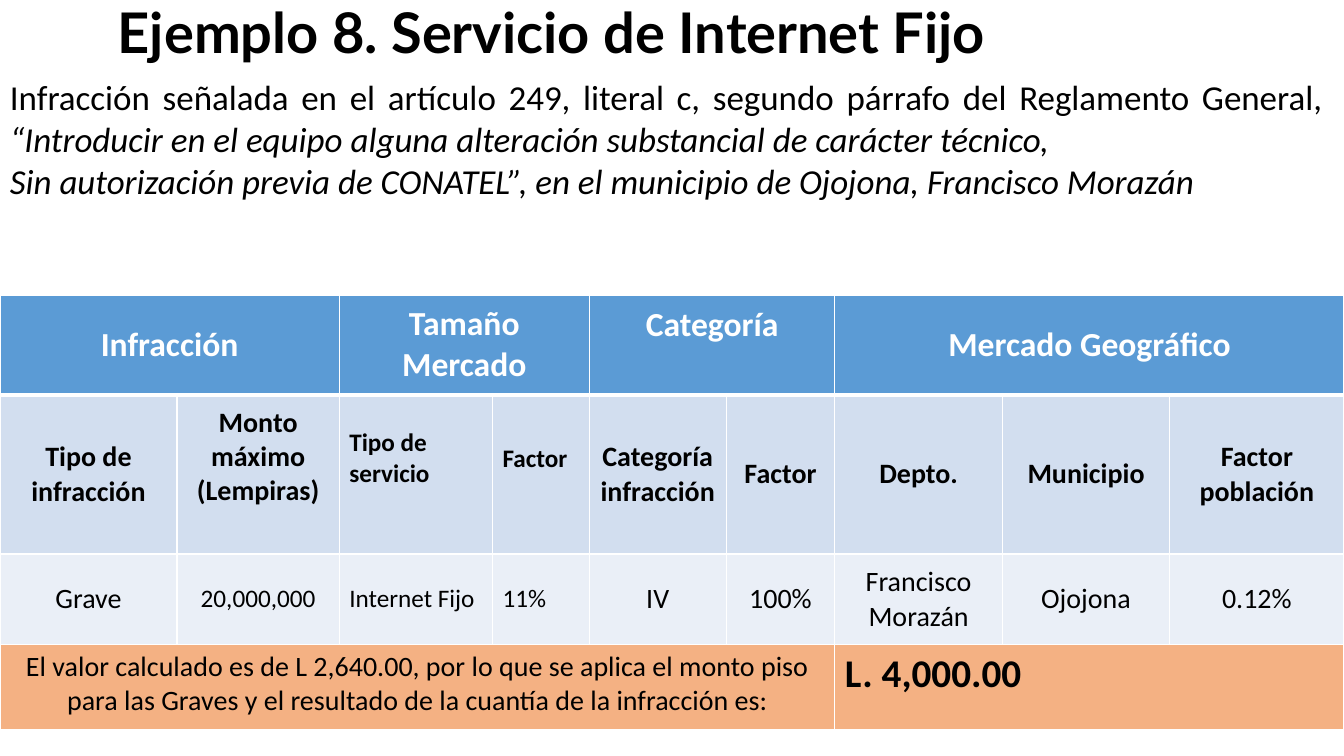
"""Slide on a fixed internet infraction and its calculated penalty."""
from lxml.etree import SubElement
from pptx import Presentation
from pptx.dml.color import RGBColor as Color
from pptx.enum.text import MSO_ANCHOR as Anchor, PP_ALIGN as Align
from pptx.oxml.ns import qn
from pptx.util import Cm, Pt

COLORS = {"text": "000000", "white": "FFFFFF", "header": "5B9BD5",
          "subheader": "D2DEEF", "data": "EAEFF7", "result": "F4B183"}
COLUMN_WIDTHS = [4.46, 4.09, 3.86, 2.44, 3.45, 2.74, 4.22, 4.22, 4.39]
ROW_HEIGHTS = [2.51, 4.01, 2.29, 2.13]
LEFT_SMALL = {"size": 18, "align": Align.LEFT}
LEFT_RAISED = {**LEFT_SMALL, "raise_by": 0.8}

ROWS = [
    ({"fill": "header", "size": 24, "bold": True, "color": "white"},
     [("Infracción", 2, {}), ("Tamaño Mercado", 2, {}),
      ("Categoría", 2, {"raise_by": 1}), ("Mercado Geográfico", 3, {})]),
    ({"fill": "subheader", "bold": True},
     [("Tipo de infracción", 1, {}),
      ("Monto máximo\n(Lempiras)", 1, {"raise_by": 0.88}),
      ("Tipo de servicio", 1, LEFT_RAISED), ("Factor", 1, LEFT_RAISED),
      ("Categoría infracción", 1, {}), ("Factor", 1, {}), ("Depto.", 1, {}),
      ("Municipio", 1, {}), ("Factor\npoblación", 1, {})]),
    ({"fill": "data"},
     [("Grave", 1, {}), ("20,000,000", 1, {"size": 18}),
      ("Internet Fijo", 1, LEFT_SMALL), ("11%", 1, LEFT_SMALL),
      ("IV", 1, {}), ("100%", 1, {}), ("Francisco Morazán", 1, {}),
      ("Ojojona", 1, {}), ("0.12%", 1, {})]),
    ({"fill": "result", "anchor": Anchor.TOP},
     [("El valor calculado es de L 2,640.00, por lo que se aplica el monto piso "
       "para las Graves y el resultado de la cuantía de la infracción es:", 6, {}),
      ("L. 4,000.00", 3, {"size": 28, "bold": True, "align": Align.LEFT})]),
]


def add_text(paragraph, text, *, size=20, font="Calibri", color="text",
             bold=False, italic=False, align=Align.LEFT, line_spacing=None):
    """Append a formatted run to a paragraph."""
    paragraph.alignment = align
    paragraph.line_spacing = line_spacing
    run = paragraph.add_run()
    run.text = text
    run.font.size = Pt(size)
    run.font.name = font
    run.font.bold = bold
    run.font.italic = italic
    run.font.color.rgb = Color.from_string(COLORS[color])


def add_text_box(slide, left, top, width, height):
    """Add a wrapping text box and return its text frame."""
    frame = slide.shapes.add_textbox(Cm(left), Cm(top), Cm(width), Cm(height)).text_frame
    frame.word_wrap = True
    return frame


def set_borders(cell, row_index):
    """Draw white cell edges, thicker under the header row."""
    top, bottom = (3 if edge == 1 else 1 for edge in (row_index, row_index + 1))
    properties = cell._tc.get_or_add_tcPr()
    for tag, width in (("a:lnL", 1), ("a:lnR", 1), ("a:lnT", top), ("a:lnB", bottom)):
        line = SubElement(properties, qn(tag), w=str(Pt(width)))
        fill = SubElement(line, qn("a:solidFill"))
        SubElement(fill, qn("a:srgbClr"), val=COLORS["white"])


def fill_cell(cell, text, *, anchor=Anchor.MIDDLE, raise_by=0, **text_format):
    """Write lines of text in a cell, optionally raised from the middle."""
    cell.vertical_anchor = anchor
    cell.margin_bottom = Cm(0.13 + raise_by)
    frame = cell.text_frame
    for index, line in enumerate(text.split("\n")):
        paragraph = frame.add_paragraph() if index else frame.paragraphs[0]
        add_text(paragraph, line, **text_format)


def add_penalty_table(slide):
    """Add the table of factors and the resulting amount."""
    table = slide.shapes.add_table(
        len(ROW_HEIGHTS), len(COLUMN_WIDTHS), Cm(0), Cm(7.44),
        Cm(sum(COLUMN_WIDTHS)), Cm(sum(ROW_HEIGHTS))).table
    table.horz_banding = False
    for column, width in zip(table.columns, COLUMN_WIDTHS):
        column.width = Cm(width)
    for row_index, (row_format, entries) in enumerate(ROWS):
        row = table.rows[row_index]
        row.height = Cm(ROW_HEIGHTS[row_index])
        text_format = {"align": Align.CENTER, **row_format}
        fill = text_format.pop("fill")
        for cell in row.cells:
            set_borders(cell, row_index)
            cell.fill.solid()
            cell.fill.fore_color.rgb = Color.from_string(COLORS[fill])
        column_index = 0
        for text, span, cell_format in entries:
            cell = table.cell(row_index, column_index)
            if span > 1:
                cell.merge(table.cell(row_index, column_index + span - 1))
            fill_cell(cell, text, **{**text_format, **cell_format})
            column_index += span


def main():
    """Build and save the slide."""
    presentation = Presentation()
    presentation.slide_width = Cm(33.87)
    presentation.slide_height = Cm(19.05)
    slide = presentation.slides.add_slide(presentation.slide_layouts[6])

    title = add_text_box(slide, 2.72, 0, 29.21, 2.31)
    add_text(title.paragraphs[0], "Ejemplo 8. Servicio de Internet Fijo",
             size=40, font="Lato", bold=True, line_spacing=0.9)

    description = add_text_box(slide, 0, 1.78, 33.58, 3.45)
    body = {"size": 25, "align": Align.JUSTIFY}
    article = description.paragraphs[0]
    add_text(article, "Infracción señalada en el artículo 249, literal c, "
             "segundo párrafo del Reglamento General, ", **body)
    add_text(article, "“Introducir en el equipo alguna alteración substancial "
             "de carácter técnico,", italic=True, **body)
    add_text(description.add_paragraph(), "Sin autorización previa de CONATEL”, "
             "en el municipio de Ojojona, Francisco Morazán", italic=True, **body)

    add_penalty_table(slide)
    presentation.save("out.pptx")


if __name__ == "__main__":
    main()
